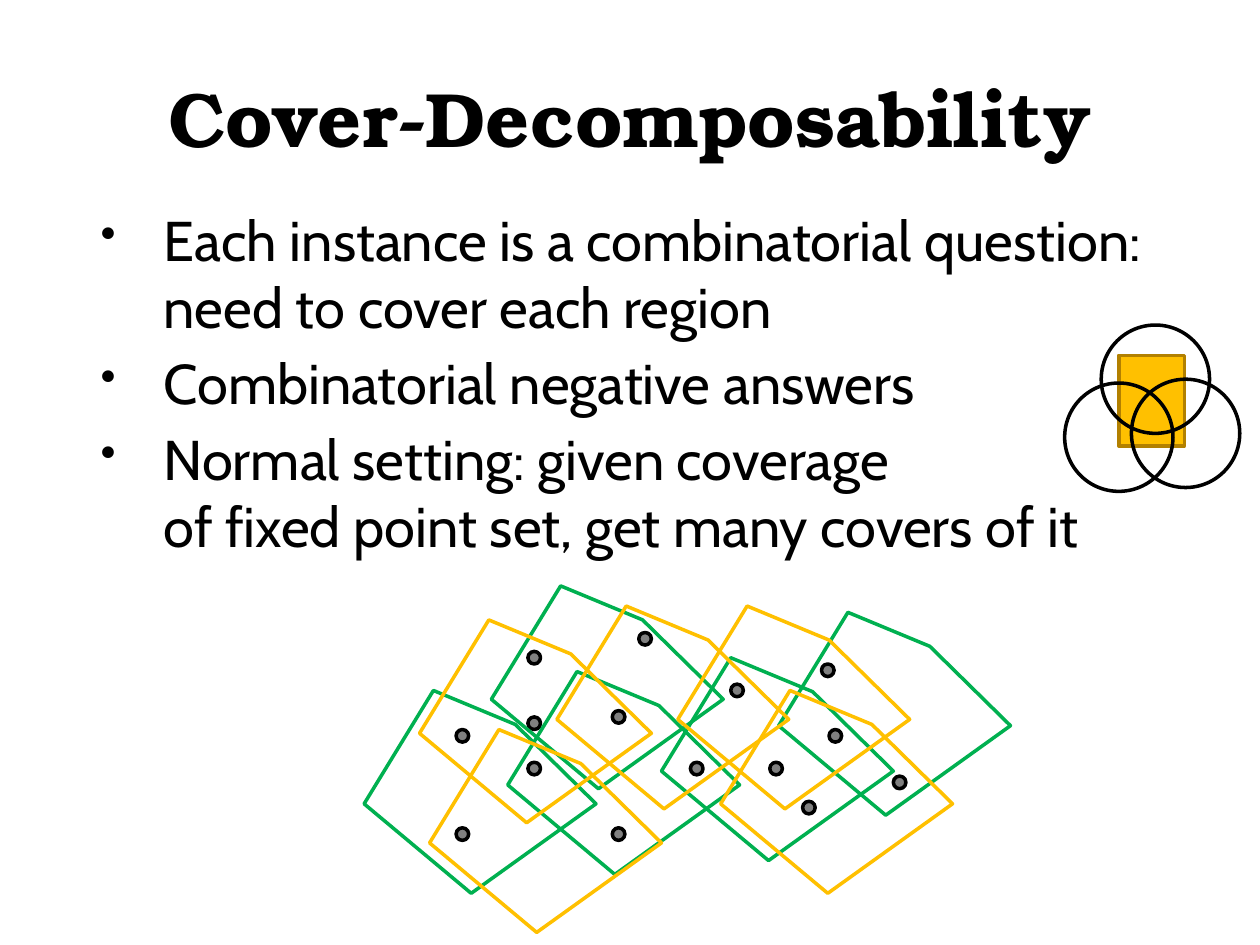
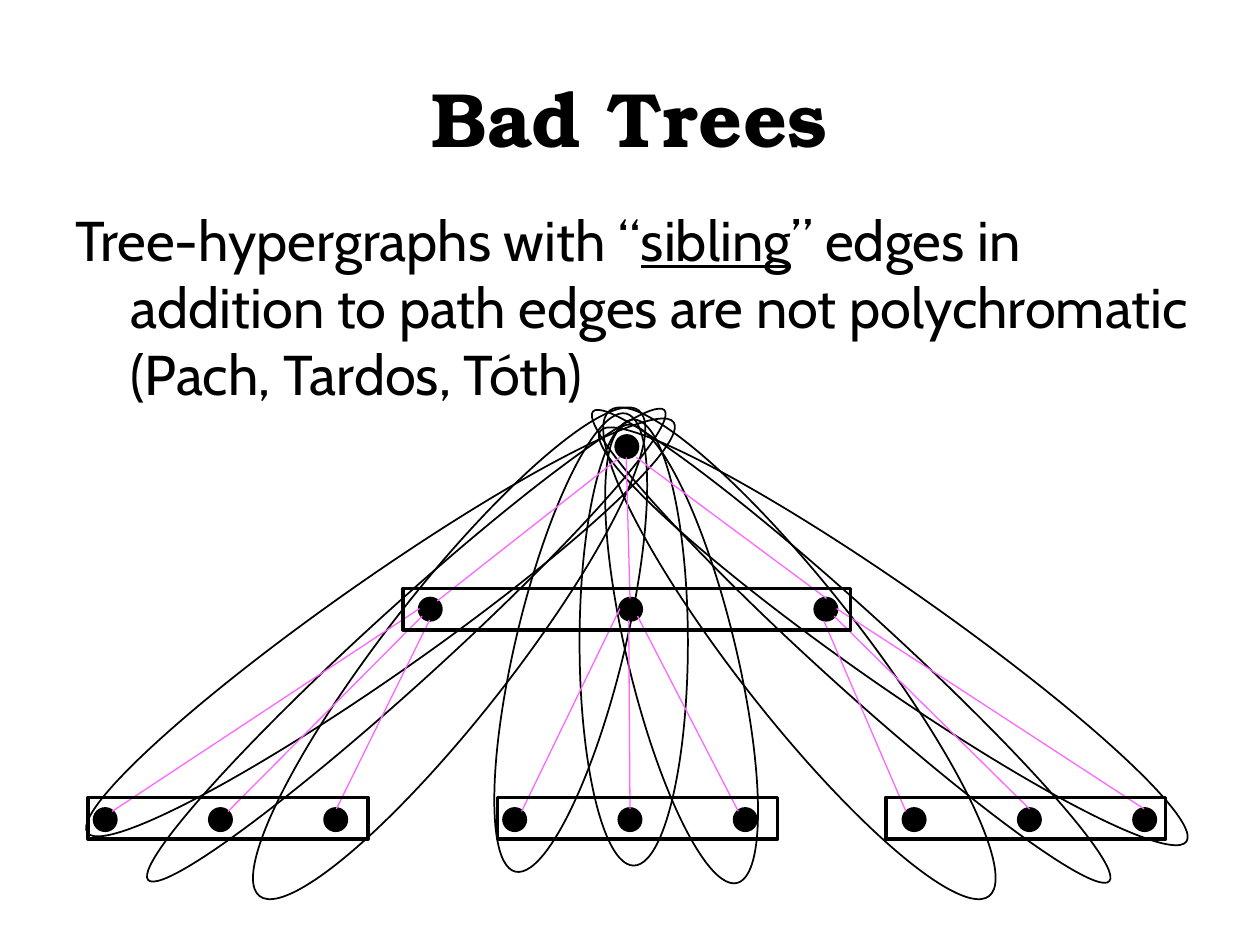
from lxml import etree
from pptx import Presentation, util as u
from pptx.dml.color import RGBColor
from pptx.enum import shapes, text
from pptx.oxml.ns import qn

BLACK = RGBColor(0x00, 0x00, 0x00)
GRAY = RGBColor(0x80, 0x80, 0x80)
GREEN = RGBColor(0x00, 0xB0, 0x50)
GOLD = RGBColor(0xFF, 0xC0, 0x00)
DARK_GOLD = RGBColor(0xB2, 0x80, 0x00)
PINK = RGBColor(0xFF, 0x66, 0xFF)
TITLE_FONT, BODY_FONT = "TeX Gyre Bonum", "Cabin"
OVAL, BAR = shapes.MSO_SHAPE.OVAL, shapes.MSO_SHAPE.RECTANGLE


def write(frame, *paragraphs, font=BODY_FONT, size=32, bold=False, align=text.PP_ALIGN.LEFT,
          before=5, margin=0, hanging=0, bullet=None):
    """Fill a text frame; a newline breaks the line and _underscores_ underline."""
    frame.word_wrap = True
    for number, content in enumerate(paragraphs):
        paragraph = frame.add_paragraph() if number else frame.paragraphs[0]
        paragraph.alignment = align
        paragraph.space_before = u.Pt(before)
        properties = paragraph._p.get_or_add_pPr()
        properties.set("marL", str(u.Inches(margin)))
        properties.set("indent", str(-u.Inches(hanging)))
        if bullet:
            etree.SubElement(properties, qn("a:buSzPct"), val="80000")
            etree.SubElement(properties, qn("a:buChar"), char=bullet)
        for row, line in enumerate(content.split("\n")):
            if row:
                paragraph.add_line_break()
            for part, words in enumerate(line.split("_")):
                run = paragraph.add_run()
                run.text = words
                run.font.name, run.font.size, run.font.bold = font, u.Pt(size), bold
                run.font.color.rgb = BLACK
                if part % 2:
                    run.font.underline = True


def draw(slide, kind, left, top, width, height, line=BLACK, weight=2, fill=None, turn=0):
    shape = slide.shapes.add_shape(kind, *map(u.Inches, (left, top, width, height)))
    shape.shadow.inherit = False
    shape.rotation = turn
    shape.line.color.rgb, shape.line.width = line, u.Pt(weight)
    if fill is None:
        shape.fill.background()
    else:
        shape.fill.solid()
        shape.fill.fore_color.rgb = fill


deck = Presentation()
deck.slide_width, deck.slide_height = u.Inches(10), u.Inches(7.5)

# Titles and body text
pages = [
    ("Cover-Decomposability", 9.5, dict(margin=0.7, hanging=0.5, bullet="•"),
     ["Each instance is a combinatorial question: need to cover each region",
      "Combinatorial negative answers",
      "Normal setting: given coverage\nof fixed point set, get many covers of it"]),
    ("Bad Trees", 9.25, dict(margin=0.44, hanging=0.44),
     ["Tree-hypergraphs with “_sibling_” edges in addition to path edges "
      "are not polychromatic (Pach, Tardos, Tóth)"]),
]
for heading, body_width, layout, paragraphs in pages:
    slide = deck.slides.add_slide(deck.slide_layouts[5])
    title = slide.shapes.title
    title.left, title.top, title.width, title.height = map(u.Inches, (0.5, 0.3, 9, 1.25))
    title.text_frame.vertical_anchor = text.MSO_ANCHOR.MIDDLE
    write(title.text_frame, heading, font=TITLE_FONT, size=44, bold=True,
          align=text.PP_ALIGN.CENTER, before=0)
    body = slide.shapes.add_textbox(*map(u.Inches, (0.5, 1.58, body_width, 5.42)))
    write(body.text_frame, *paragraphs, **layout)
covers, trees = deck.slides

# Point set and its two families of translated pentagons
points = [(4.86, 5.64), (5.48, 6.05), (6.11, 6.05), (4.86, 6.57), (4.19, 6.05),
          (4.19, 5.69), (5.8, 5.43), (5.07, 5.02), (3.62, 6.57), (7.09, 6.16),
          (3.62, 5.79), (6.37, 6.36), (6.58, 5.79), (6.52, 5.27), (4.19, 5.17)]
for left, top in points:
    draw(covers, OVAL, left, top, 0.1, 0.1, fill=GRAY)

# Pentagon corners and positions in hundredths of an inch
PENTAGON = [(0, 90), (55, 0), (120, 27), (184, 90), (85, 161)]
families = {
    GREEN: [(390, 465), (289, 548), (403, 533), (618, 486), (525, 522)],
    GOLD: [(333, 492), (442, 481), (341, 579), (572, 548), (538, 481)],
}
for color, positions in families.items():
    for left, top in positions:
        corners = [(left + x, top + y) for x, y in PENTAGON]
        builder = covers.shapes.build_freeform(*corners[0], scale=u.Inches(0.01))
        builder.add_line_segments(corners[1:], close=True)
        pentagon = builder.convert_to_shape()
        pentagon.shadow.inherit = False
        pentagon.fill.background()
        pentagon.line.color.rgb, pentagon.line.width = color, u.Pt(2)

# Region covered by three discs
draw(covers, BAR, 8.88, 2.82, 0.52, 0.72, line=DARK_GOLD, fill=GOLD)
for left, top in [(8.45, 3.04), (8.98, 3.01), (8.74, 2.58)]:
    draw(covers, OVAL, left, top, 0.86, 0.86)

# Path edges: one ellipse from the root to each leaf
path_edges = [
    (2.64, 2.14, 0.76, 5.68, 55), (2.93, 2.35, 0.59, 5.54, 47.7), (3.06, 2.74, 1.01, 4.89, 38),
    (4.1, 3.23, 0.86, 3.74, 13.6), (4.6, 3.33, 0.86, 3.54, 0), (4.98, 3.32, 0.86, 3.74, 346.4),
    (5.84, 2.74, 1.01, 4.89, 322), (6.46, 2.36, 0.59, 5.54, 312.3), (6.71, 2.21, 0.76, 5.68, 305),
]
for *box, turn in path_edges:
    draw(trees, OVAL, *box, weight=1, turn=turn)

# Tree nodes: root, its children, and three groups of leaves
LEAF_STEP = 0.915
nodes = [(4.89, 3.46)] + [(left, 4.75) for left in (3.33, 4.92, 6.47)]
nodes += [(first + LEAF_STEP * i, 6.42) for first in (0.75, 4, 7.17) for i in range(3)]
for left, top in nodes:
    draw(trees, OVAL, left, top, 0.17, 0.17, fill=BLACK)

branches = [
    (3.47, 4.77, 4.92, 3.63), (5, 4.75, 4.97, 3.63), (6.56, 4.75, 5.05, 3.63),
    (0.89, 6.44, 3.33, 4.83), (1.81, 6.44, 3.35, 4.89), (2.67, 6.42, 3.41, 4.92),
    (4.14, 6.44, 4.92, 4.83), (5, 6.42, 4.99, 4.92), (5.86, 6.44, 5.06, 4.89),
    (7.19, 6.44, 6.54, 4.93), (8.17, 6.42, 6.62, 4.89), (9.08, 6.42, 6.64, 4.83),
]
for ends in branches:
    branch = trees.shapes.add_connector(shapes.MSO_CONNECTOR.STRAIGHT, *map(u.Inches, ends))
    branch.line.color.rgb, branch.line.width = PINK, u.Pt(0.75)
    etree.SubElement(branch._element.spPr, qn("a:effectLst"))

# Sibling edges
draw(trees, BAR, 3.2, 4.67, 3.55, 0.33)
for left in (0.7, 3.95, 7.03):
    draw(trees, BAR, left, 6.33, 2.22, 0.33)

deck.save("out.pptx")
